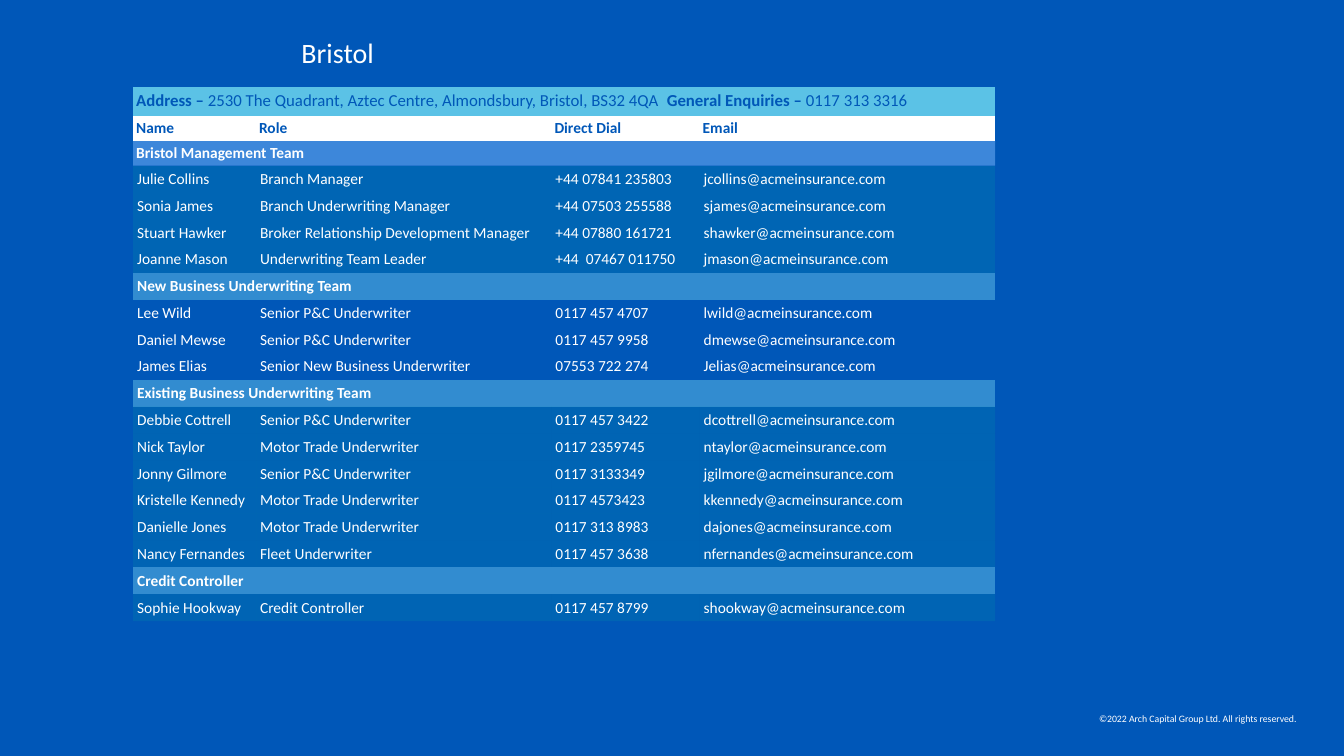
from lxml.etree import SubElement
from pptx import Presentation
from pptx.dml.color import RGBColor
from pptx.enum.text import MSO_ANCHOR, MSO_AUTO_SIZE, PP_ALIGN
from pptx.oxml.ns import qn
from pptx.util import Inches, Pt

BLUE = RGBColor(0x00, 0x57, 0xB8)
WHITE = RGBColor(0xFF, 0xFF, 0xFF)
SKY = RGBColor(0x5B, 0xC2, 0xE6)
PALE = RGBColor(0x7D, 0xBA, 0xFF)
BAND = RGBColor(0x32, 0x8C, 0xD0)
DEEP = RGBColor(0x00, 0x65, 0xB4)
TEAL = RGBColor(0x00, 0x9C, 0xA6)
NO_GRID_STYLE = "{2D5ABB26-0587-4C30-8999-92F81FD0307C}"

MAIL_DOMAIN = "acmeinsurance.com"
COL_WIDTHS = [1.22, 2.93, 1.47, 2.93]
TOP_ROWS = [0.29, 0.25, 0.24]
TABLE_BOX = (1.32, 0.86, 8.55, 5.3)

ADDRESS = [("Address – ", True),
           ("2530 The Quadrant, Aztec Centre, Almondsbury, Bristol, BS32 4QA", False),
           ("  General Enquiries – ", True),
           ("0117 313 3316", False)]
HEADINGS = ["Name", "Role", "Direct Dial", "Email"]

# Each team: name, then its members as name, role, phone, mailbox
TEAMS = [
    ("Bristol Management Team", [
        ("Julie Collins", "Branch Manager", "+44 07841 235803", "jcollins"),
        ("Sonia James", "Branch Underwriting Manager", "+44 07503 255588", "sjames"),
        ("Stuart Hawker", "Broker Relationship Development Manager",
         "+44 07880 161721", "shawker"),
        ("Joanne Mason", "Underwriting Team Leader", "+44  07467 011750", "jmason")]),
    ("New Business Underwriting Team", [
        ("Lee Wild", "Senior P&C Underwriter", "0117 457 4707", "lwild"),
        ("Daniel Mewse", "Senior P&C Underwriter", "0117 457 9958", "dmewse"),
        ("James Elias", "Senior New Business Underwriter", "07553 722 274", "Jelias")]),
    ("Existing Business Underwriting Team", [
        ("Debbie Cottrell", "Senior P&C Underwriter", "0117 457 3422", "dcottrell"),
        ("Nick Taylor", "Motor Trade Underwriter", "0117 2359745", "ntaylor"),
        ("Jonny Gilmore", "Senior P&C Underwriter", "0117 3133349", "jgilmore"),
        ("Kristelle Kennedy", "Motor Trade Underwriter", "0117 4573423", "kkennedy"),
        ("Danielle Jones", "Motor Trade Underwriter", "0117 313 8983", "dajones"),
        ("Nancy Fernandes", "Fleet Underwriter", "0117 457 3638", "nfernandes")]),
    ("Credit Controller", [
        ("Sophie Hookway", "Credit Controller", "0117 457 8799", "shookway")]),
]
# Per team: band fill, band opacity, member fill, member opacity
TEAM_FILLS = [(PALE, 49, DEEP, 100), (BAND, 100, None, 100),
              (BAND, 100, TEAL, 20), (BAND, 100, TEAL, 20)]


class SlideBuilder:
    font = "Calibri"

    def __init__(self, prs):
        self.s = prs.slides.add_slide(prs.slide_layouts[5])
        self.s.background.fill.solid()
        self.s.background.fill.fore_color.rgb = BLUE

    def add_runs(self, tf, runs, size, color, align=PP_ALIGN.LEFT):
        p = tf.paragraphs[0]
        p.alignment = align
        for text, bold in runs:
            r = p.add_run()
            r.text = text
            r.font.name = self.font
            r.font.size = Pt(size)
            r.font.bold = bold
            r.font.color.rgb = color

    def title(self, text, x, y, w, h):
        sp = self.s.shapes.title
        sp.left, sp.top, sp.width, sp.height = map(Inches, (x, y, w, h))
        tf = sp.text_frame
        tf.auto_size = MSO_AUTO_SIZE.NONE
        tf.vertical_anchor = MSO_ANCHOR.TOP
        self.add_runs(tf, [(text, False)], 20, WHITE)

    def text(self, text, x, y, w, h, size, align):
        sp = self.s.shapes.add_textbox(*map(Inches, (x, y, w, h)))
        sp.text_frame.word_wrap = True
        self.add_runs(sp.text_frame, [(text, False)], size, WHITE, align)

    def table(self, box, widths, heights):
        frame = self.s.shapes.add_table(len(heights), len(widths), *map(Inches, box))
        tbl = frame.table
        tbl.first_row = tbl.horz_banding = False
        frame._element.find(".//" + qn("a:tableStyleId")).text = NO_GRID_STYLE
        for col, width in zip(tbl.columns, widths):
            col.width = Inches(width)
        for row, height in zip(tbl.rows, heights):
            row.height = Inches(height)
        return tbl

    def cell(self, cell, runs, fill, opacity=100, size=11, color=WHITE, header=False):
        inset = Inches(0.03 if header else 0.04)
        cell.margin_left = cell.margin_right = inset
        cell.margin_top = cell.margin_bottom = inset
        cell.vertical_anchor = MSO_ANCHOR.MIDDLE if header else MSO_ANCHOR.TOP
        self.add_runs(cell.text_frame, runs, size, color)
        if fill is None:
            cell.fill.background()
            return
        cell.fill.solid()
        cell.fill.fore_color.rgb = fill
        if opacity < 100:
            clr = cell._tc.tcPr.find(".//" + qn("a:srgbClr"))
            SubElement(clr, qn("a:alpha"), val=str(opacity * 1000))

    def band(self, tbl, row, runs, fill, **style):
        first = tbl.cell(row, 0)
        first.merge(tbl.cell(row, len(tbl.columns) - 1))
        self.cell(first, runs, fill, **style)

    def row(self, tbl, row, texts, fill, bold=False, **style):
        for col, text in enumerate(texts):
            self.cell(tbl.cell(row, col), [(text, bold)], fill, **style)


def main():
    prs = Presentation()
    prs.slide_width, prs.slide_height = Inches(13.33), Inches(7.5)
    b = SlideBuilder(prs)

    # Title and footer
    b.title("Bristol", 2.89, 0.3, 2.13, 0.44)
    b.text("©2022 Arch Capital Group Ltd. All rights reserved. ",
           0.61, 7.02, 12.37, 0.22, 7, PP_ALIGN.RIGHT)

    # Table grid: the rows below the top three share the remaining height
    rest = sum(1 + len(members) for _, members in TEAMS) - 1
    heights = TOP_ROWS + [(TABLE_BOX[3] - sum(TOP_ROWS)) / rest] * rest
    tbl = b.table(TABLE_BOX, COL_WIDTHS, heights)

    # Address and column headings
    b.band(tbl, 0, ADDRESS, SKY, size=12, color=BLUE, header=True)
    b.row(tbl, 1, HEADINGS, WHITE, bold=True, color=BLUE, header=True)

    # Teams
    row = 2
    for (team, members), fills in zip(TEAMS, TEAM_FILLS):
        band_fill, band_opacity, fill, opacity = fills
        b.band(tbl, row, [(team, True)], band_fill, opacity=band_opacity, header=row == 2)
        for row, (*details, mailbox) in enumerate(members, row + 1):
            b.row(tbl, row, [*details, f"{mailbox}@{MAIL_DOMAIN}"], fill, opacity=opacity)
        row += 1

    prs.save("out.pptx")


if __name__ == "__main__":
    main()
